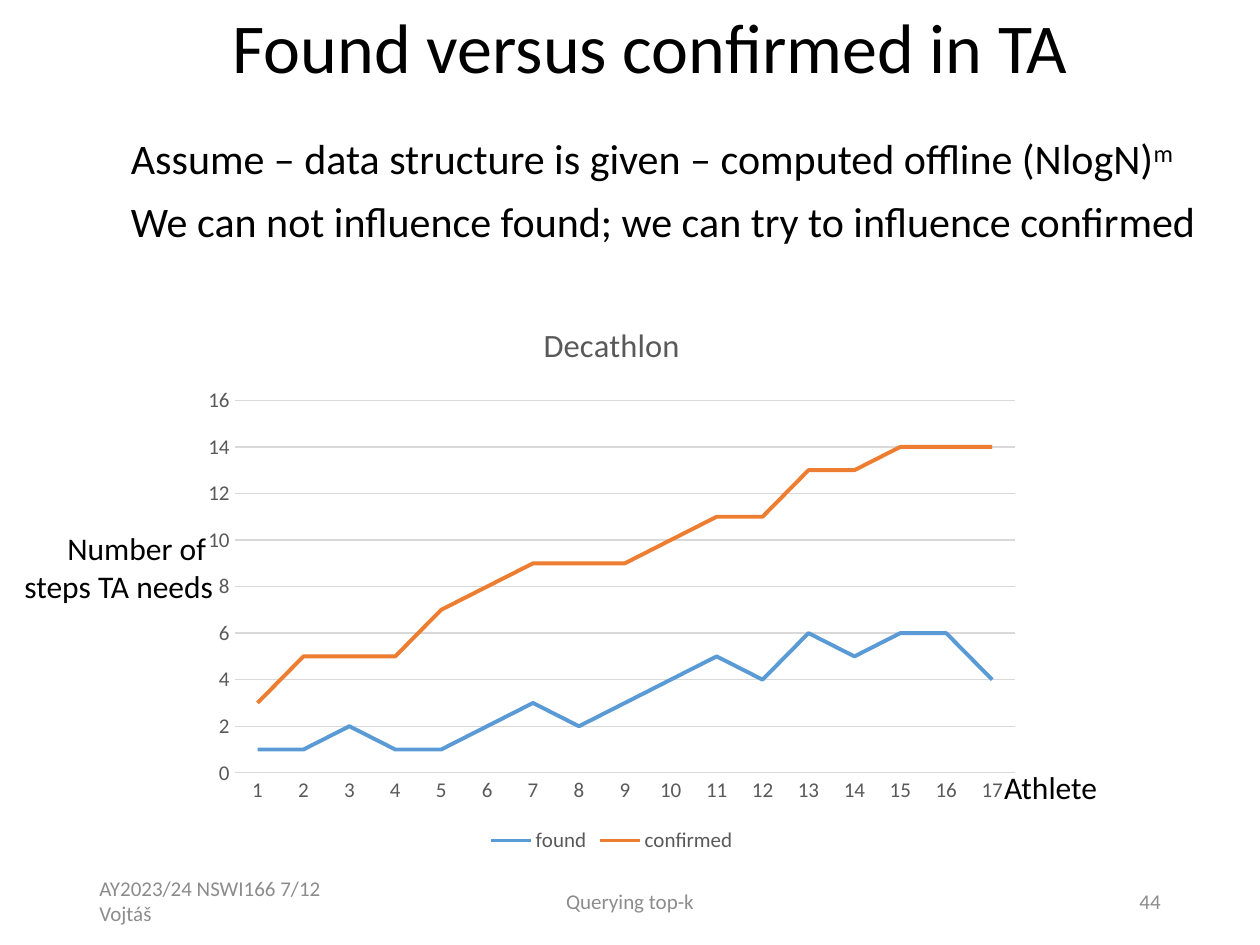
"""Build the slide comparing found and confirmed steps in TA."""
from dataclasses import dataclass

from pptx import Presentation
from pptx.chart.data import CategoryChartData
from pptx.dml.color import RGBColor
from pptx.enum.chart import XL_CHART_TYPE, XL_LEGEND_POSITION, XL_TICK_MARK
from pptx.enum.text import MSO_ANCHOR, MSO_AUTO_SIZE, PP_ALIGN
from pptx.util import Emu, Pt

LEFT, CENTER, RIGHT = PP_ALIGN.LEFT, PP_ALIGN.CENTER, PP_ALIGN.RIGHT
TOP, MIDDLE = MSO_ANCHOR.TOP, MSO_ANCHOR.MIDDLE
GROW = MSO_AUTO_SIZE.SHAPE_TO_FIT_TEXT
LINE_CHART = XL_CHART_TYPE.LINE
LEGEND_BELOW = XL_LEGEND_POSITION.BOTTOM
NO_TICK = XL_TICK_MARK.NONE
EMU_PER_PX = 9144


@dataclass(frozen=True)
class Theme:
    """Colours and type sizes of the slide."""
    font: str = "Calibri"
    ink: str = "000000"
    footer: str = "8C8C8C"
    chart_text: str = "595959"
    grid: str = "D9D9D9"
    title_size: float = 40
    body_size: float = 24
    label_size: float = 18
    chart_title_size: float = 18.6
    small_size: float = 12
    grid_width: float = 0.75
    series_width: float = 2.25


@dataclass(frozen=True)
class Box:
    """Place of an element in px, 100 to the inch."""
    left: int
    top: int
    width: int
    height: int

    def emu(self) -> tuple[Emu, ...]:
        """Return the place in EMU."""
        sides = (self.left, self.top, self.width, self.height)
        return tuple(Emu(side * EMU_PER_PX) for side in sides)


@dataclass(frozen=True)
class Run:
    """Stretch of text with one baseline."""
    text: str
    raised: bool = False


@dataclass(frozen=True)
class TextBlock:
    """Text box with paragraphs of runs."""
    box: Box
    paragraphs: tuple[tuple[Run, ...], ...]
    size: float
    color: str
    align: PP_ALIGN = LEFT
    anchor: MSO_ANCHOR = MIDDLE
    spacing: float = 1.0
    gap: int = 0
    wrap: bool = True


@dataclass(frozen=True)
class Curve:
    """One line of the chart."""
    name: str
    color: str
    steps: tuple[int, ...]


THEME = Theme()
TEXTS = (
    TextBlock(Box(69, 695, 225, 40), ((Run("AY2023/24 NSWI166 7/12 Vojtáš"),),),
              THEME.small_size, THEME.footer),
    TextBlock(Box(331, 695, 338, 40), ((Run("Querying top-k"),),),
              THEME.small_size, THEME.footer, CENTER),
    TextBlock(Box(706, 695, 225, 40), ((Run("44"),),),
              THEME.small_size, THEME.footer, RIGHT),
    TextBlock(Box(94, 105, 875, 564),
              ((Run("Assume – data structure is given – computed offline (NlogN)"),
                Run("m", raised=True)),
               (Run("We can not influence found; we can try to influence confirmed"),)),
              THEME.body_size, THEME.ink, anchor=TOP, spacing=0.9, gap=10),
    TextBlock(Box(85, 7, 862, 67), ((Run("Found versus confirmed in TA"),),),
              THEME.title_size, THEME.ink, CENTER, spacing=0.9),
)
AXIS_LABELS = (
    TextBlock(Box(787, 605, 95, 40), ((Run("Athlete"),),),
              THEME.label_size, THEME.ink, anchor=TOP, wrap=False),
    TextBlock(Box(5, 415, 174, 71), ((Run("Number of "),), (Run("steps TA needs"),)),
              THEME.label_size, THEME.ink, RIGHT, TOP, wrap=False),
)
CHART_BOX = Box(152, 237, 667, 444)
CURVES = (
    Curve("found", "5B9BD5", (1, 1, 2, 1, 1, 2, 3, 2, 3, 4, 5, 4, 6, 5, 6, 6, 4)),
    Curve("confirmed", "ED7D31",
          (3, 5, 5, 5, 7, 8, 9, 9, 9, 10, 11, 11, 13, 13, 14, 14, 14)),
)


def style_font(font, size: float, color: str) -> None:
    """Set face, size and colour of a font."""
    font.name = THEME.font
    font.size = Pt(size)
    font.bold = False
    font.color.rgb = RGBColor.from_string(color)


def style_line(line, color: str, width: float) -> None:
    """Set colour and width of a line."""
    line.color.rgb = RGBColor.from_string(color)
    line.width = Pt(width)


def draw_text(slide, block: TextBlock) -> None:
    """Draw a text block run by run."""
    frame = slide.shapes.add_textbox(*block.box.emu()).text_frame
    frame.word_wrap = block.wrap
    frame.vertical_anchor = block.anchor
    if not block.wrap:
        frame.auto_size = GROW
    for index, runs in enumerate(block.paragraphs):
        paragraph = frame.add_paragraph() if index else frame.paragraphs[0]
        paragraph.alignment = block.align
        paragraph.line_spacing = block.spacing
        paragraph.space_before = Pt(block.gap if index else 0)
        for part in runs:
            run = paragraph.add_run()
            run.text = part.text
            style_font(run.font, block.size, block.color)
            if part.raised:
                run._r.get_or_add_rPr().set("baseline", "30000")


def draw_chart(slide, box: Box, title: str, curves: tuple[Curve, ...]) -> None:
    """Draw the line chart of steps by athlete."""
    data = CategoryChartData()
    data.categories = [str(athlete + 1) for athlete in range(len(curves[0].steps))]
    for curve in curves:
        data.add_series(curve.name, curve.steps)
    chart = slide.shapes.add_chart(LINE_CHART, *box.emu(), data).chart
    style_font(chart.font, THEME.small_size, THEME.chart_text)

    heading = chart.chart_title.text_frame.paragraphs[0].add_run()
    heading.text = title
    style_font(heading.font, THEME.chart_title_size, THEME.chart_text)
    chart.chart_title.include_in_layout = False

    chart.has_legend = True
    chart.legend.position = LEGEND_BELOW
    chart.legend.include_in_layout = False
    style_font(chart.legend.font, THEME.small_size, THEME.chart_text)

    athletes, steps = chart.category_axis, chart.value_axis
    for axis in (athletes, steps):
        axis.major_tick_mark = axis.minor_tick_mark = NO_TICK
        style_font(axis.tick_labels.font, THEME.small_size, THEME.chart_text)
    style_line(athletes.format.line, THEME.grid, THEME.grid_width)
    steps.format.line.fill.background()
    steps.minimum_scale, steps.maximum_scale, steps.major_unit = 0, 16, 2
    style_line(steps.major_gridlines.format.line, THEME.grid, THEME.grid_width)

    chart.plots[0].vary_by_categories = False
    for series, curve in zip(chart.plots[0].series, curves):
        series.smooth = False
        style_line(series.format.line, curve.color, THEME.series_width)


def main() -> None:
    """Build and save the slide."""
    deck = Presentation()
    deck.slide_width, deck.slide_height = Box(0, 0, 1000, 750).emu()[2:]
    slide = deck.slides.add_slide(deck.slide_layouts[6])
    for block in TEXTS:
        draw_text(slide, block)
    draw_chart(slide, CHART_BOX, "Decathlon", CURVES)
    for label in AXIS_LABELS:
        draw_text(slide, label)
    deck.save("out.pptx")


if __name__ == "__main__":
    main()
